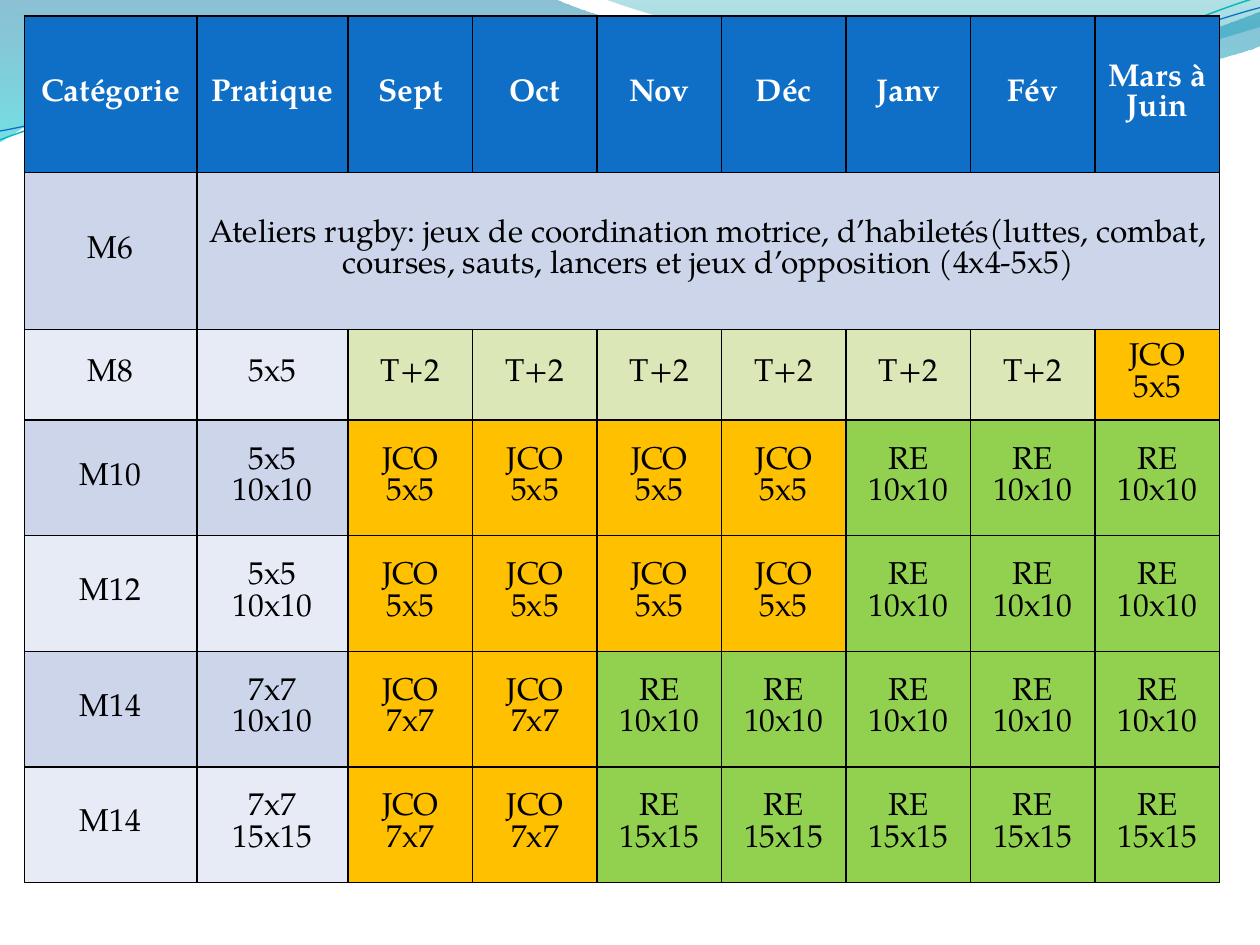
from math import cos, radians, sin

from lxml import etree
from pptx import Presentation
from pptx.dml.color import RGBColor
from pptx.enum.text import MSO_ANCHOR, PP_ALIGN
from pptx.oxml.ns import qn
from pptx.util import Cm, Pt

MIDDLE = MSO_ANCHOR.MIDDLE
CENTER = PP_ALIGN.CENTER
FONT = "TeX Gyre Pagella"
COLORS = {
    "header": "0F6FC6", "white": "FFFFFF", "black": "000000",
    "band_dark": "CCD5EA", "band_light": "E7EBF5",
    "T+2": "DBE7B6", "JCO": "FFC000", "RE": "92D050",
    "blue": "0074A1", "cyan": "00C6CF", "teal": "00A1A9", "azure": "008BBF",
    "aqua": "0AB8BF",
}
UNITS = 1000
TILT = 2.7
PIVOT_X, PIVOT_Y = 4.99, 0.58


def rgb(name):
    return RGBColor.from_string(COLORS[name])


def draw_wave(segments, closed, tilt=0):
    turn = radians(tilt)
    points = []
    for segment in segments:
        for x, y in zip(segment[::2], segment[1::2]):
            dx, dy = x - PIVOT_X, y - PIVOT_Y
            points.append(((PIVOT_X + dx * cos(turn) - dy * sin(turn)) * UNITS,
                           (PIVOT_Y + dx * sin(turn) + dy * cos(turn)) * UNITS))
    builder = slide.shapes.build_freeform(*points[0], scale=Cm(2.54) / UNITS)
    builder.add_line_segments(points[1:], close=closed)
    wave = builder.convert_to_shape()
    wave.shadow.inherit = False
    wave.rotation = -tilt
    steps = iter(list(wave.element.spPr.iter(qn("a:lnTo"))))
    for segment in segments[1:]:
        step = next(steps)
        if len(segment) == 6:
            curve = etree.Element(qn("a:cubicBezTo"))
            step.addprevious(curve)
            for part in (step, next(steps), next(steps)):
                curve.append(part[0])
                part.getparent().remove(part)
    return wave


prs = Presentation()
prs.slide_width, prs.slide_height = Cm(25.4), Cm(19.05)
slide = prs.slides.add_slide(prs.slide_layouts[6])

bands = [
    ([(0, 0), (4.4, -0.01), (4.76, 0.17, 6.64, 0.63, 7.58, 0.63),
      (8.53, 0.63, 9.58, 0.26, 10, 0.09), (10.01, 0.36),
      (9.83, 0.44, 8.7, 0.76, 7.46, 0.75), (6.22, 0.75, 3.82, 0.28, 2.57, 0.34),
      (1.29, 0.36, 0.46, 0.83, -0.01, 1.13)],
     [(0, "blue", 45), (1, "cyan", 55)]),
    ([(4.79, -0.01), (5.09, 0.11, 6.82, 0.62, 7.69, 0.65),
      (8.56, 0.69, 9.61, 0.32, 10, 0.21), (10, 0)],
     [(0, "teal", 30), (0.8, "azure", 45)]),
]
for outline, gradient in bands:
    band = draw_wave(outline, True)
    band.line.fill.background()
    band.fill.gradient()
    band.fill.gradient_angle = 270
    for stop, (position, color, _) in zip(band.fill.gradient_stops, gradient):
        stop.position = position
        stop.color.rgb = rgb(color)
    for tint, (_, _, opacity) in zip(band.element.spPr.iter(qn("a:srgbClr")), gradient):
        etree.SubElement(tint, qn("a:alpha"), val=str(opacity * 1000))

strands = [
    ([(0, 1.11), (0.48, 0.93, 1.58, 0.57, 2.77, 0.52),
      (3.95, 0.47, 5.93, 0.89, 7.13, 0.8), (8.33, 0.71, 9.38, 0.15, 9.98, -0.02)],
     "aqua", 0.85),
    ([(0, 1.04), (0.47, 0.96, 1.64, 0.61, 2.83, 0.56),
      (4.03, 0.51, 5.97, 0.84, 7.17, 0.75), (8.36, 0.67, 9.41, 0.21, 10, 0.06)],
     "header", 0.75),
]
for course, color, width in strands:
    strand = draw_wave(course, False, TILT)
    strand.fill.background()
    strand.line.color.rgb = rgb(color)
    strand.line.width = Pt(width)

workshops = ("Ateliers rugby: jeux de coordination motrice, d’habiletés(luttes, combat, "
             "courses, sauts, lancers et jeux d’opposition (4x4-5x5)")
schedule = [
    ["Catégorie", "Pratique", "Sept", "Oct", "Nov", "Déc", "Janv", "Fév", "Mars à Juin"],
    ["M6", workshops] + [""] * 7,
    ["M8", "5x5"] + ["T+2"] * 6 + ["JCO\n5x5"],
]
for category, small, large, months in [("M10", "5x5", "10x10", 4), ("M12", "5x5", "10x10", 4),
                                       ("M14", "7x7", "10x10", 2), ("M14", "7x7", "15x15", 2)]:
    schedule.append([category, f"{small}\n{large}"]
                    + [f"JCO\n{small}"] * months + [f"RE\n{large}"] * (7 - months))

column_widths = [3.48, 3.05] + [2.51] * 7
row_heights = [3.16, 3.16, 1.83] + [2.33] * 4
table = slide.shapes.add_table(len(row_heights), len(column_widths), Cm(0.49), Cm(0.32),
                               Cm(sum(column_widths)), Cm(sum(row_heights))).table
for column, width in zip(table.columns, column_widths):
    column.width = Cm(width)
for row, height in zip(table.rows, row_heights):
    row.height = Cm(height)
workshop_cell = table.cell(1, 1)
workshop_cell.merge(table.cell(1, 8))
workshop_cell.margin_left = workshop_cell.margin_right = Cm(0.2)

for r, entries in enumerate(schedule):
    band_color = "header" if r == 0 else "band_dark" if r % 2 else "band_light"
    for c, entry in enumerate(entries):
        cell = table.cell(r, c)
        cell.vertical_anchor = MIDDLE
        cell.fill.solid()
        activity = entry.split("\n")[0]
        cell.fill.fore_color.rgb = rgb(activity if activity in COLORS else band_color)
        cell_properties = cell._tc.get_or_add_tcPr()
        for index, side in enumerate(("lnL", "lnR", "lnT", "lnB")):
            border = etree.Element(qn(f"a:{side}"), w=str(Pt(1)))
            ink = etree.SubElement(border, qn("a:solidFill"))
            etree.SubElement(ink, qn("a:srgbClr"), val=COLORS["black"])
            cell_properties.insert(index, border)
        if not entry:
            continue
        cell.text_frame.text = entry
        for paragraph in cell.text_frame.paragraphs:
            paragraph.alignment = CENTER
            for run in paragraph.runs:
                run.font.name = FONT
                run.font.size = Pt(18)
                run.font.bold = r == 0
                run.font.color.rgb = rgb("white" if r == 0 else "black")

prs.save("out.pptx")
